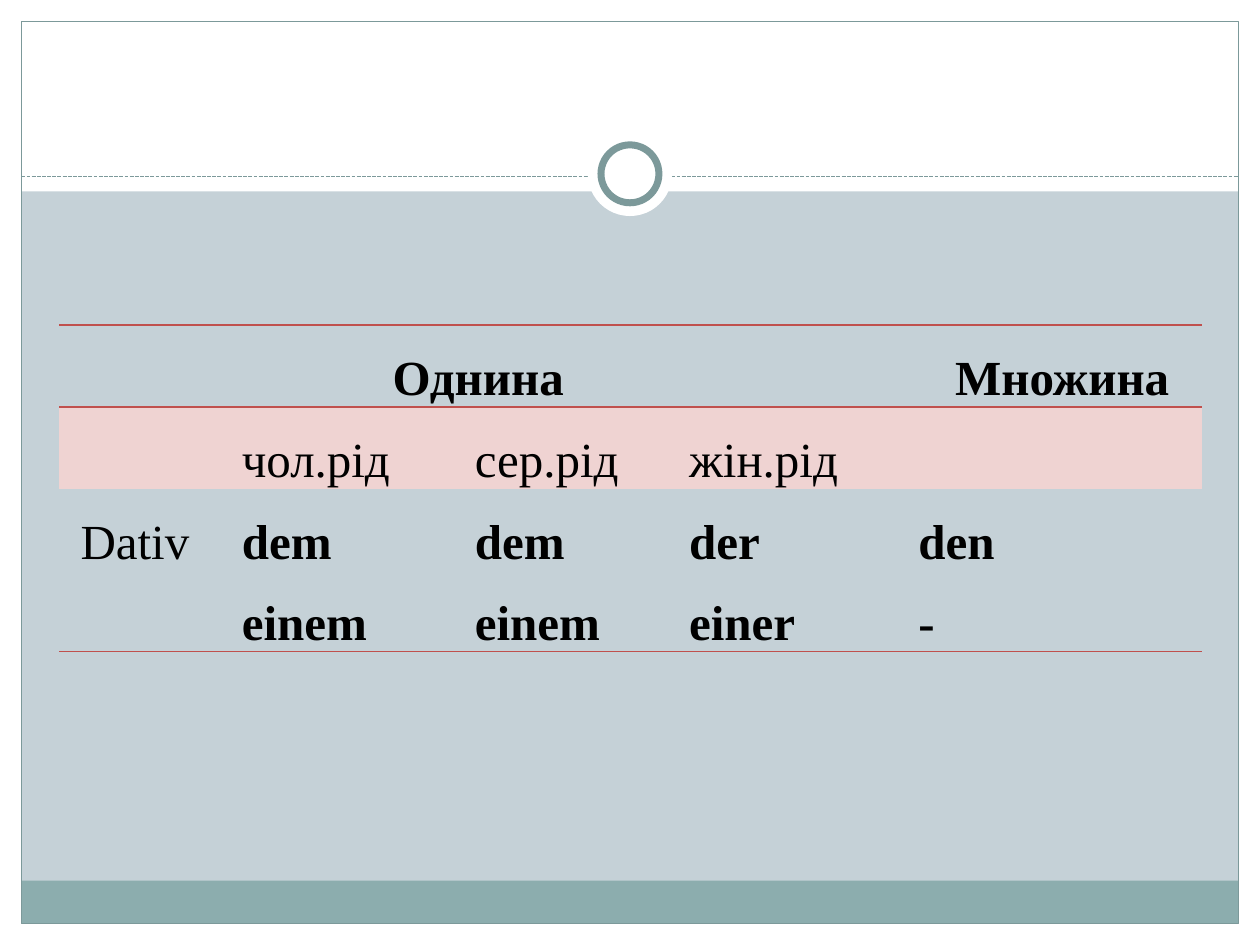
from lxml import etree
from pptx import Presentation
from pptx import util as u
from pptx.dml.color import RGBColor
from pptx.enum import dml, shapes, text
from pptx.oxml import ns

COLORS = {"background": "C5D1D7", "panel": "FFFFFF", "footer": "8CADAE", "frame": "7C999A",
          "rule": "C0504D", "band": "EFD3D2", "text": "000000"}
WIDTH, HEIGHT, MARGIN = 10, 7.5, 0.17
NO_TABLE_STYLE = "{2D5ABB26-0587-4C30-8999-92F81FD0307C}"


def add_panel(kind, left, top, width, height, fill=None, line_width=None):
    shape = slide.shapes.add_shape(kind, *map(u.Inches, (left, top, width, height)))
    shape.shadow.inherit = False
    if fill:
        shape.fill.solid()
        shape.fill.fore_color.rgb = RGBColor.from_string(COLORS[fill])
    else:
        shape.fill.background()
    if line_width:
        shape.line.color.rgb = RGBColor.from_string(COLORS["frame"])
        shape.line.width = u.Pt(line_width)
    else:
        shape.line.fill.background()


def add_rule(cell, side):
    """Draw a 1 pt border on one side of a cell: lnT or lnB."""
    border = etree.Element(ns.qn(f"a:{side}"), w=str(u.Pt(1)))
    fill = etree.SubElement(border, ns.qn("a:solidFill"))
    etree.SubElement(fill, ns.qn("a:srgbClr"), val=COLORS["rule"])
    cell._tc.get_or_add_tcPr().insert(0, border)


presentation = Presentation()
presentation.slide_width, presentation.slide_height = u.Inches(WIDTH), u.Inches(HEIGHT)
slide = presentation.slides.add_slide(presentation.slide_layouts[6])
slide.background.fill.solid()
slide.background.fill.fore_color.rgb = RGBColor.from_string(COLORS["background"])

# White margins, footer band and frame
RECTANGLE, OVAL = shapes.MSO_SHAPE.RECTANGLE, shapes.MSO_SHAPE.OVAL
inner_width, inner_bottom = WIDTH - 2 * MARGIN, HEIGHT - MARGIN
for box in ((0, inner_bottom, WIDTH, MARGIN), (0, 0, WIDTH, 1.52),
            (0, 0, MARGIN, HEIGHT), (WIDTH - MARGIN, 0, MARGIN, HEIGHT)):
    add_panel(RECTANGLE, *box, fill="panel")
add_panel(RECTANGLE, MARGIN, inner_bottom - 0.34, inner_width, 0.34, fill="footer")
add_panel(RECTANGLE, MARGIN, MARGIN, inner_width, inner_bottom - MARGIN, line_width=0.75)

# Dashed divider with a centred ring
divider = slide.shapes.add_connector(
    shapes.MSO_CONNECTOR.STRAIGHT,
    *map(u.Inches, (MARGIN, 1.4, WIDTH - MARGIN, 1.4)))
divider.line.color.rgb = RGBColor.from_string(COLORS["frame"])
divider.line.width = u.Pt(0.75)
divider.line.dash_style = dml.MSO_LINE.SQUARE_DOT
etree.SubElement(divider._element.spPr, ns.qn("a:effectLst"))
for diameter, line_width in ((0.67, None), (0.46, 4)):
    add_panel(OVAL, (WIDTH - diameter) / 2, 1.38 - diameter / 2, diameter, diameter,
              fill="panel", line_width=line_width)

# Article table
column_widths = (1.33, 1.8, 1.8, 1.72, 2.42)
row_heights = (0.65, 0.65, 1.29)
indents = (0.1, 0.05, 0.1, 0, 0.1)
rows = (
    ("Однина", "", "", "", "Множина"),
    ("", "чол.рід", "сер.рід", "жін.рід", ""),
    ("Dativ", "dem\neinem", "dem\neinem", "der\neiner", "den\n-"),
)
frame = slide.shapes.add_table(
    len(rows), len(column_widths), u.Inches(0.47), u.Inches(2.58),
    u.Inches(sum(column_widths)), u.Inches(sum(row_heights)))
table = frame.table
table.first_row = table.horz_banding = False
table._tbl.tblPr.find(ns.qn("a:tableStyleId")).text = NO_TABLE_STYLE
for column, width in zip(table.columns, column_widths):
    column.width = u.Inches(width)
for row, height in zip(table.rows, row_heights):
    row.height = u.Inches(height)
table.cell(0, 0).merge(table.cell(0, 3))

for row_index, labels in enumerate(rows):
    for column_index, label in enumerate(labels):
        cell = table.cell(row_index, column_index)
        if row_index == 1:
            cell.fill.solid()
            cell.fill.fore_color.rgb = RGBColor.from_string(COLORS["band"])
        else:
            cell.fill.background()
            add_rule(cell, "lnB")
        if row_index == 0:
            add_rule(cell, "lnT")
        if not label:
            continue
        cell.margin_left = cell.margin_right = u.Inches(0.07)
        cell.margin_top = cell.margin_bottom = 0
        cell.text_frame.text = label
        if row_index == 0:
            alignment, indent = text.PP_ALIGN.CENTER, 0.2 if column_index else 0
        else:
            alignment, indent = text.PP_ALIGN.JUSTIFY, indents[column_index]
        for paragraph in cell.text_frame.paragraphs:
            paragraph.alignment = alignment
            paragraph.line_spacing = 1.5
            paragraph._p.get_or_add_pPr().set("marL", str(u.Inches(indent)))
            font = paragraph.runs[0].font
            font.name, font.size = "Times New Roman", u.Pt(28)
            font.bold = row_index != 1 and label != "Dativ"
            font.color.rgb = RGBColor.from_string(COLORS["text"])

presentation.save("out.pptx")
